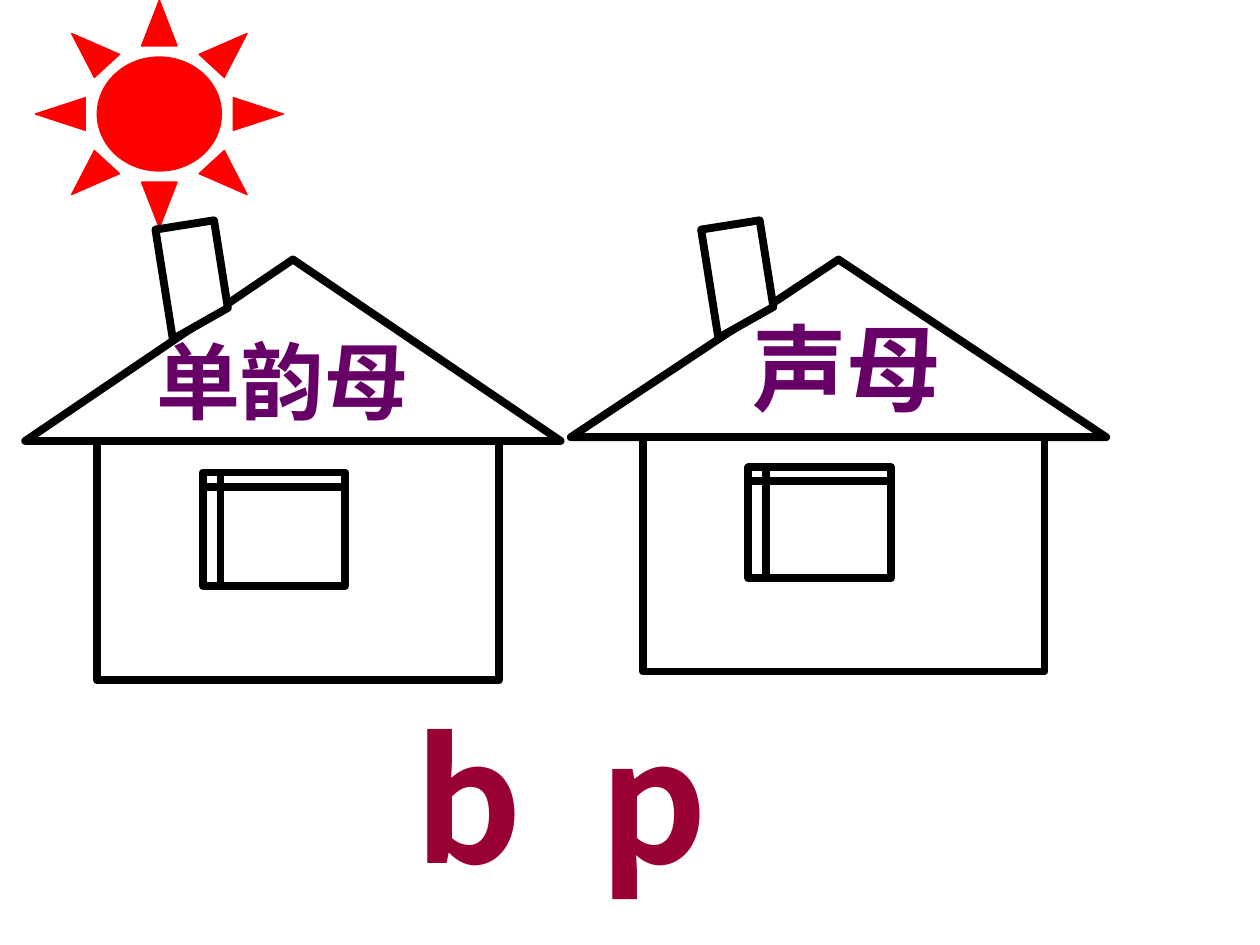
from dataclasses import dataclass

from lxml import etree
from pptx import Presentation
from pptx.dml.color import RGBColor
from pptx.enum.shapes import MSO_SHAPE
from pptx.oxml.ns import qn
from pptx.shapes.autoshape import Shape
from pptx.util import Pt

PX = 9144
COLORS = {"sun": "FF0000", "wall": "FFFFFF", "outline": "000000",
          "sign": "660066", "letters": "990033"}


@dataclass(frozen=True)
class Box:
    left: int
    top: int
    width: int
    height: int

    def emu(self) -> tuple[int, int, int, int]:
        return (self.left * PX, self.top * PX, self.width * PX, self.height * PX)


@dataclass(frozen=True)
class House:
    left: int
    roof_height: int
    wall_height: int
    chimney_height: int
    window_top: int
    window_height: int


@dataclass(frozen=True)
class Label:
    text: str
    box: Box
    size: int
    font: str
    color: str
    inset: int = 10
    tab: int = 0


ROOF_TOP = 206
HOUSES = [
    House(20, 144, 190, 88, 375, 90),
    House(453, 141, 186, 87, 371, 88),
]
LABELS = [
    Label("单韵母", Box(114, 257, 269, 90), 48, "Calibri", "sign"),
    Label("声母", Box(587, 241, 269, 100), 54, "Calibri", "sign"),
    Label("b\tp", Box(297, 547, 323, 170), 96, "Noto Sans CJK SC", "letters",
          inset=32, tab=147),
]


def color(name: str) -> RGBColor:
    return RGBColor.from_string(COLORS[name])


def draw_shape(shapes, kind: MSO_SHAPE, box: Box, fill: str, line: str,
               weight: float) -> Shape:
    shape = shapes.add_shape(kind, *box.emu())
    shape.shadow.inherit = False
    shape.fill.solid()
    shape.fill.fore_color.rgb = color(fill)
    shape.line.color.rgb = color(line)
    shape.line.width = Pt(weight)
    return shape


def draw_house(page, house: House) -> None:
    shapes = page.shapes.add_group_shape().shapes
    left = house.left
    wall_top = ROOF_TOP + house.roof_height
    parts = [
        (MSO_SHAPE.ISOSCELES_TRIANGLE, Box(left, ROOF_TOP, 425, house.roof_height), 0),
        (MSO_SHAPE.RECTANGLE, Box(left + 57, wall_top, 319, house.wall_height), 0),
        (MSO_SHAPE.FLOWCHART_MANUAL_INPUT,
         Box(left + 110, 178, 47, house.chimney_height), 171),
        (MSO_SHAPE.FLOWCHART_INTERNAL_STORAGE,
         Box(left + 141, house.window_top, 113, house.window_height), 0),
    ]
    for kind, box, rotation in parts:
        draw_shape(shapes, kind, box, "wall", "outline", 4.5).rotation = rotation


def draw_label(page, label: Label) -> None:
    frame = page.shapes.add_textbox(*label.box.emu()).text_frame
    frame.word_wrap = True
    frame.margin_left = label.inset * PX
    para = frame.paragraphs[0]
    para.text = label.text
    para.font.name = label.font
    para.font.size = Pt(label.size)
    para.font.bold = True
    para.font.color.rgb = color(label.color)
    if label.tab:
        tabs = etree.Element(qn("a:tabLst"))
        etree.SubElement(tabs, qn("a:tab"), pos=str(label.tab * PX), algn="l")
        para._p.get_or_add_pPr().insert(0, tabs)


def main() -> None:
    deck = Presentation()
    deck.slide_width, deck.slide_height = 1000 * PX, 750 * PX
    page = deck.slides.add_slide(deck.slide_layouts[6])
    draw_shape(page.shapes, MSO_SHAPE.SUN, Box(28, 0, 197, 181), "sun", "sun", 0.75)
    for house in HOUSES:
        draw_house(page, house)
    for label in LABELS:
        draw_label(page, label)
    deck.save("out.pptx")


if __name__ == "__main__":
    main()
